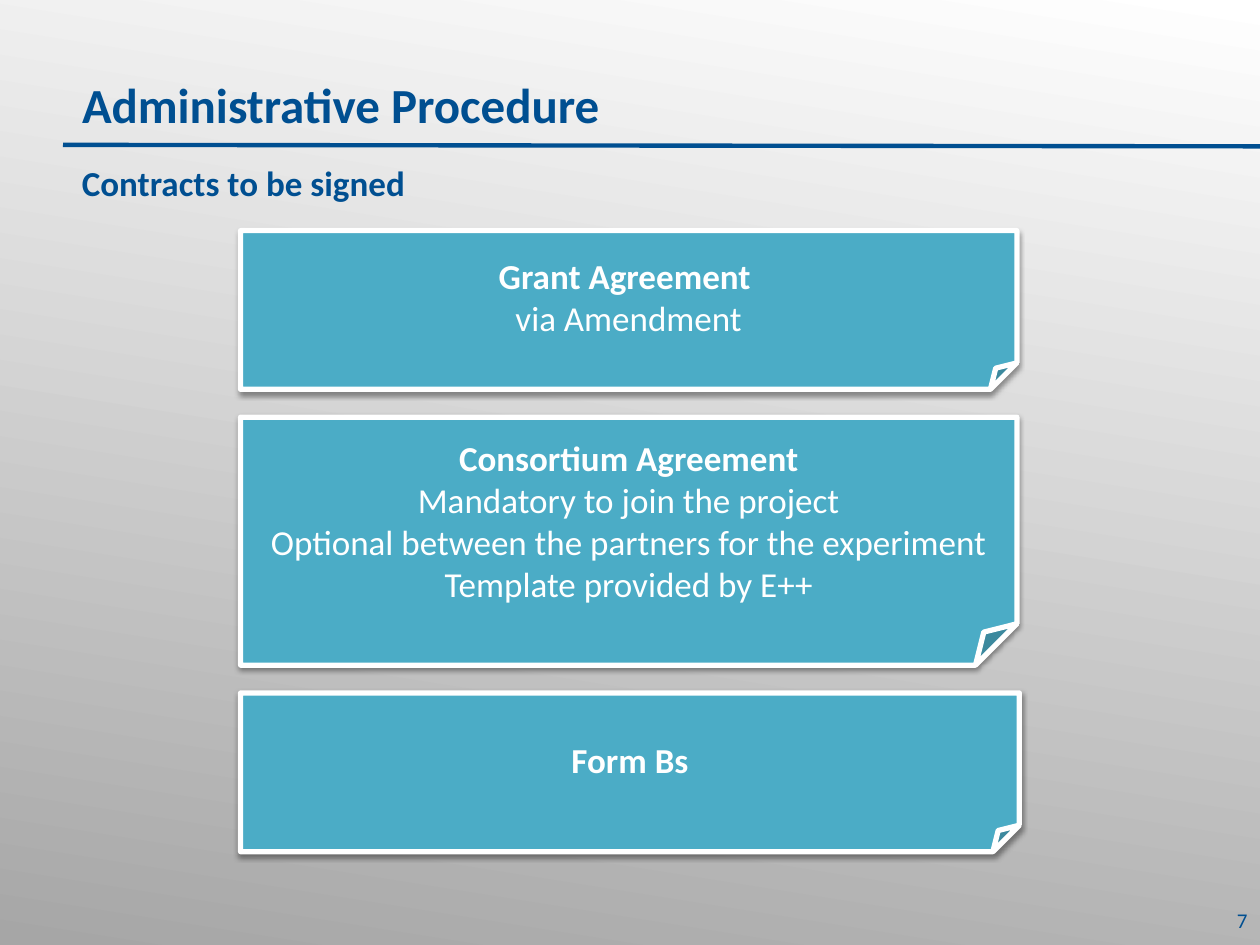
from lxml import etree
from pptx import Presentation
from pptx.dml.color import RGBColor
from pptx.enum.shapes import MSO_CONNECTOR, MSO_SHAPE
from pptx.enum.text import MSO_ANCHOR, MSO_AUTO_SIZE, PP_ALIGN
from pptx.oxml import parse_xml
from pptx.oxml.ns import nsdecls, qn
from pptx.util import Cm, Pt

NAVY = RGBColor(0x00, 0x4F, 0x91)
TEAL = RGBColor(0x4B, 0xAC, 0xC6)
WHITE = RGBColor(0xFF, 0xFF, 0xFF)
GREY = RGBColor(0xA6, 0xA6, 0xA6)

RECTANGLE, FOLDED_CORNER = MSO_SHAPE.RECTANGLE, MSO_SHAPE.FOLDED_CORNER
STRAIGHT = MSO_CONNECTOR.STRAIGHT
LEFT, CENTER, RIGHT = PP_ALIGN.LEFT, PP_ALIGN.CENTER, PP_ALIGN.RIGHT
TOP, MIDDLE = MSO_ANCHOR.TOP, MSO_ANCHOR.MIDDLE
NO_AUTOFIT = MSO_AUTO_SIZE.NONE

NOTE_LEFT, NOTE_TOP, NOTE_GAP = 4.85, 4.65, 0.56
NOTES = [  # width, height, heading, further lines
    (15.65, 3.2, "Grant Agreement ", ["via Amendment"]),
    (15.65, 5.0, "Consortium Agreement", [
        "Mandatory to join the project",
        "Optional between the partners for the experiment Template provided by E++",
    ]),
    (15.7, 3.2, "Form Bs", []),
]


class SlideBuilder:
    font_name = "Calibri"

    def __init__(self, deck):
        self.deck = deck
        self.slide = deck.slides.add_slide(deck.slide_layouts[5])

    def style(self, para, size, color, bold=False, align=LEFT):
        para.alignment = align
        font = para.font
        font.name, font.size, font.bold = self.font_name, Pt(size), bold
        font.color.rgb = color

    def backdrop(self):
        """Cover the slide with a gradient, behind everything else."""
        box = self.slide.shapes.add_shape(
            RECTANGLE, 0, 0, self.deck.slide_width, self.deck.slide_height)
        box.shadow.inherit = False
        box.line.fill.background()
        box.fill.gradient()
        box.fill.gradient_angle = 360 - 99
        for stop, color in zip(box.fill.gradient_stops, (WHITE, GREY)):
            stop.color.rgb = color
        self.slide.shapes._spTree.insert(2, box._element)

    def rule(self, x1, y1, x2, y2):
        line = self.slide.shapes.add_connector(STRAIGHT, Cm(x1), Cm(y1), Cm(x2), Cm(y2))
        line.line.color.rgb = NAVY
        line.line.width = Pt(2.5)
        etree.SubElement(line._element.spPr, qn("a:effectLst"))

    def fill_text(self, box, place, text, size, bold=False, align=LEFT, anchor=TOP):
        box.left, box.top, box.width, box.height = map(Cm, place)
        frame = box.text_frame
        frame.word_wrap = True
        frame.auto_size = NO_AUTOFIT
        frame.vertical_anchor = anchor
        para = frame.paragraphs[0]
        para.text = text
        self.style(para, size, NAVY, bold, align)
        return para

    def heading(self, box, place, text, size):
        para = self.fill_text(box, place, text, size, bold=True)
        para.line_spacing = 0.9
        para.space_after = Pt(12)

    def title(self, place, text):
        self.heading(self.slide.shapes.title, place, text, 28)

    def subtitle(self, place, text):
        self.heading(self.slide.shapes.add_textbox(0, 0, 0, 0), place, text, 20)

    def page_number(self, place, text):
        box = self.slide.shapes.add_textbox(0, 0, 0, 0)
        self.fill_text(box, place, text, 12, align=RIGHT, anchor=MIDDLE)

    def drop_shadow(self, shape):
        shape._element.spPr.append(parse_xml(
            f'<a:effectLst {nsdecls("a")}>'
            f'<a:outerShdw blurRad="{Pt(3.1)}" dist="{Pt(1.6)}" dir="5400000" rotWithShape="0">'
            '<a:srgbClr val="000000"><a:alpha val="38000"/></a:srgbClr>'
            '</a:outerShdw></a:effectLst>'))

    def note(self, left, top, width, height, heading, lines):
        box = self.slide.shapes.add_shape(
            FOLDED_CORNER, Cm(left), Cm(top), Cm(width), Cm(height))
        box.fill.solid()
        box.fill.fore_color.rgb = TEAL
        box.line.color.rgb = WHITE
        box.line.width = Pt(3)
        self.drop_shadow(box)
        frame = box.text_frame
        frame.word_wrap = True
        frame.vertical_anchor = MIDDLE
        frame.text = "\n".join([heading, *lines])
        for index, para in enumerate(frame.paragraphs):
            self.style(para, 20, WHITE, bold=index == 0, align=CENTER)


def main():
    deck = Presentation()
    deck.slide_width, deck.slide_height = Cm(25.4), Cm(19.05)
    page = SlideBuilder(deck)
    page.backdrop()
    page.rule(1.27, 2.92, 25.4, 2.95)
    page.title((1.4, 1.5, 22.96, 1.35), "Administrative Procedure")
    page.page_number((19.48, 18.03, 5.92, 1.02), "7")
    page.subtitle((1.4, 3.23, 23.34, 1.02), "Contracts to be signed")
    top = NOTE_TOP
    for width, height, heading, lines in NOTES:
        page.note(NOTE_LEFT, top, width, height, heading, lines)
        top += height + NOTE_GAP
    deck.save("out.pptx")


if __name__ == "__main__":
    main()
